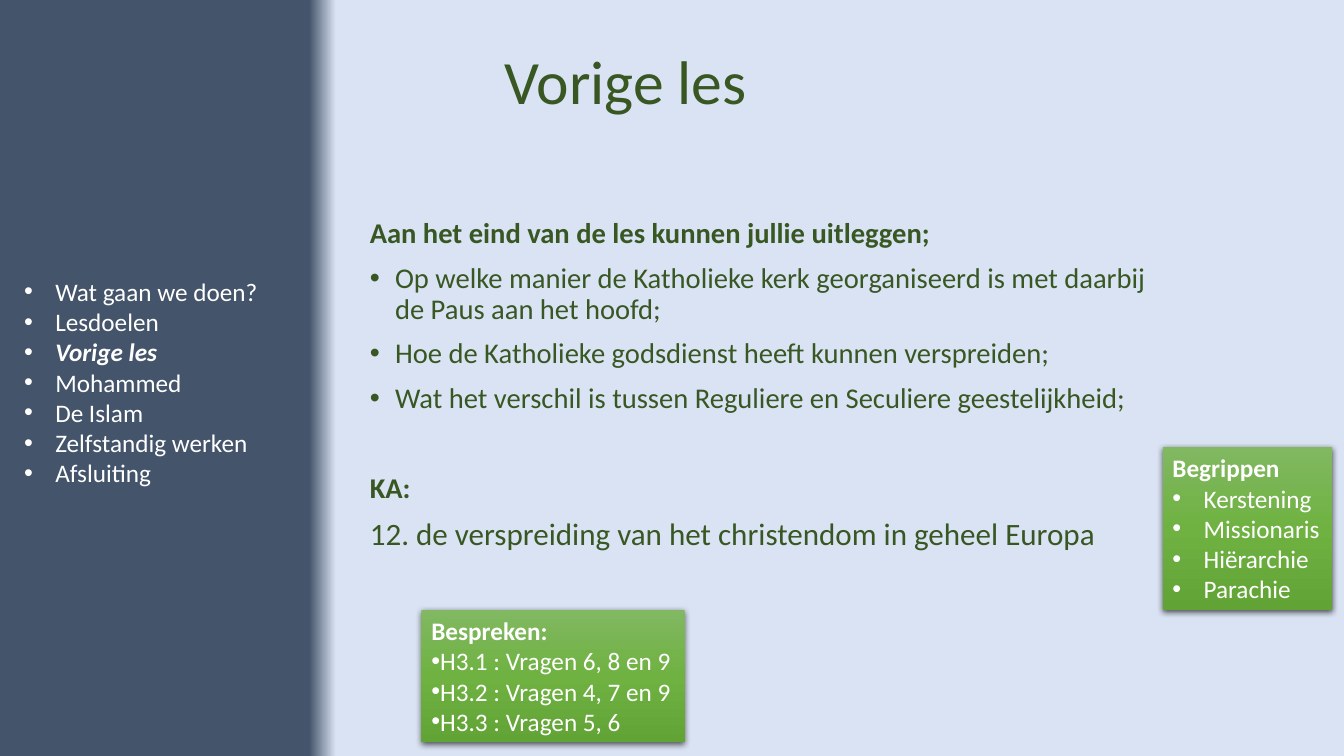
from copy import deepcopy
from dataclasses import dataclass

from lxml import etree
from pptx import Presentation
from pptx.dml.color import RGBColor
from pptx.enum.shapes import MSO_SHAPE
from pptx.enum.text import MSO_ANCHOR
from pptx.oxml.ns import qn
from pptx.util import Inches, Pt

RECTANGLE, MIDDLE = MSO_SHAPE.RECTANGLE, MSO_ANCHOR.MIDDLE

# Content: each paragraph is (text, style); styles: b bold, i italic, * bullet
TITLE = "Vorige les"
AGENDA = [
    ("Wat gaan we doen?", "*"),
    ("Lesdoelen", "*"),
    ("Vorige les", "*bi"),
    ("Mohammed", "*"),
    ("De Islam", "*"),
    ("Zelfstandig werken", "*"),
    ("Afsluiting", "*"),
]
GOALS = [
    ("Aan het eind van de les kunnen jullie uitleggen;", "b"),
    ("Op welke manier de Katholieke kerk georganiseerd is met daarbij "
     "de Paus aan het hoofd;", "*"),
    ("Hoe de Katholieke godsdienst heeft kunnen verspreiden;", "*"),
    ("Wat het verschil is tussen Reguliere en Seculiere geestelijkheid;", "*"),
    ("KA:", "b"),
    ("12. de verspreiding van het christendom in geheel Europa", ""),
]
DISCUSS = [
    ("Bespreken:", "b"),
    ("H3.1 : Vragen 6, 8 en 9", "*"),
    ("H3.2 : Vragen 4, 7 en 9", "*"),
    ("H3.3 : Vragen 5, 6", "*"),
]
TERMS = [
    ("Begrippen", "b"),
    ("Kerstening", "*"),
    ("Missionaris", "*"),
    ("Hiërarchie", "*"),
    ("Parachie", "*"),
]


@dataclass(frozen=True)
class Theme:
    font: str = "Calibri"
    green: str = "385723"
    white: str = "FFFFFF"
    backdrop: tuple = ((0.23, "44546A"), (0.25, "DAE3F3"))
    card: tuple = ((0, "81B861"), (0.5, "6FB242"), (1, "62A336"))
    title: float = 44
    body: float = 20.4
    closing: float = 22.2
    small: float = 18


T = Theme()

# Places in inches: left, top, width, height
TITLE_BOX = (4.9, 0.17, 7.72, 1.34)
AGENDA_BOX = (0.14, 2.69, 2.55, 2.22)
GOALS_BOX = (3.57, 2.12, 7.9, 3.59)
DISCUSS_BOX = (4.18, 6.05, 2.61, 1.31)
TERMS_BOX = (11.53, 4.43, 1.68, 1.62)


def inches(box):
    return [Inches(v) for v in box]


def paint_gradient(fill, element, stops, angle):
    fill.gradient()
    fill.gradient_angle = angle
    stop_list = next(element.iter(qn("a:gsLst")))
    while len(stop_list) < len(stops):
        stop_list.append(deepcopy(stop_list[-1]))
    for stop, (position, color) in zip(fill.gradient_stops, stops):
        stop.position = position
        stop.color.rgb = RGBColor.from_string(color)


def format_run(p, size, color, style=""):
    for r in p.runs:
        r.font.name, r.font.size = T.font, Pt(size)
        r.font.color.rgb = RGBColor.from_string(color)
        r.font.bold, r.font.italic = "b" in style, "i" in style


def add_bullet(p, indent):
    pPr = p._p.get_or_add_pPr()
    pPr.set("marL", str(Inches(indent)))
    pPr.set("indent", str(-Inches(indent)))
    etree.SubElement(pPr, qn("a:buFont"), typeface="Arial")
    etree.SubElement(pPr, qn("a:buChar"), char="•")


def write(tf, lines, size, color, indent):
    tf.text = "\n".join(text for text, _ in lines)
    for p, (_, style) in zip(tf.paragraphs, lines):
        format_run(p, size, color, style)
        if "*" in style:
            add_bullet(p, indent)


def add_shadow(shape):
    effects = etree.SubElement(shape._element.spPr, qn("a:effectLst"))
    shadow = etree.SubElement(effects, qn("a:outerShdw"), blurRad=str(Pt(4.5)),
                              dist=str(Pt(1.5)), dir="5400000", rotWithShape="0")
    color = etree.SubElement(shadow, qn("a:srgbClr"), val="000000")
    etree.SubElement(color, qn("a:alpha"), val="63000")


def add_card(s, box, lines, indent):
    sp = s.shapes.add_shape(RECTANGLE, *inches(box))
    paint_gradient(sp.fill, sp._element, T.card, 270)
    sp.line.fill.background()
    add_shadow(sp)
    tf = sp.text_frame
    tf.word_wrap = False
    write(tf, lines, T.small, T.white, indent)
    for p in tf.paragraphs:
        p.alignment = 1


def main():
    prs = Presentation()
    prs.slide_width, prs.slide_height = Inches(13.33), Inches(7.5)
    s = prs.slides.add_slide(prs.slide_layouts[5])
    paint_gradient(s.background.fill, s._element, T.backdrop, 0)

    # Title
    title = s.shapes.title
    title.left, title.top, title.width, title.height = inches(TITLE_BOX)
    tf = title.text_frame
    tf.text = TITLE
    tf.vertical_anchor = MIDDLE
    tf.paragraphs[0].alignment = 1
    tf.paragraphs[0].line_spacing = 0.9
    format_run(tf.paragraphs[0], T.title, T.green)

    # Agenda in the side band
    tf = s.shapes.add_textbox(*inches(AGENDA_BOX)).text_frame
    tf.word_wrap = False
    write(tf, AGENDA, T.small, T.white, 0.31)

    # Learning goals, with a wider gap above the last section
    tf = s.shapes.add_textbox(*inches(GOALS_BOX)).text_frame
    tf.word_wrap = True
    write(tf, GOALS, T.body, T.green, 0.25)
    for p, (text, _) in zip(tf.paragraphs, GOALS):
        p.line_spacing = 0.9
        p.space_before = Pt(42 if text == "KA:" else 10)
    format_run(tf.paragraphs[-1], T.closing, T.green)

    # Cards
    add_card(s, DISCUSS_BOX, DISCUSS, 0)
    add_card(s, TERMS_BOX, TERMS, 0.31)

    prs.save("out.pptx")


if __name__ == "__main__":
    main()
